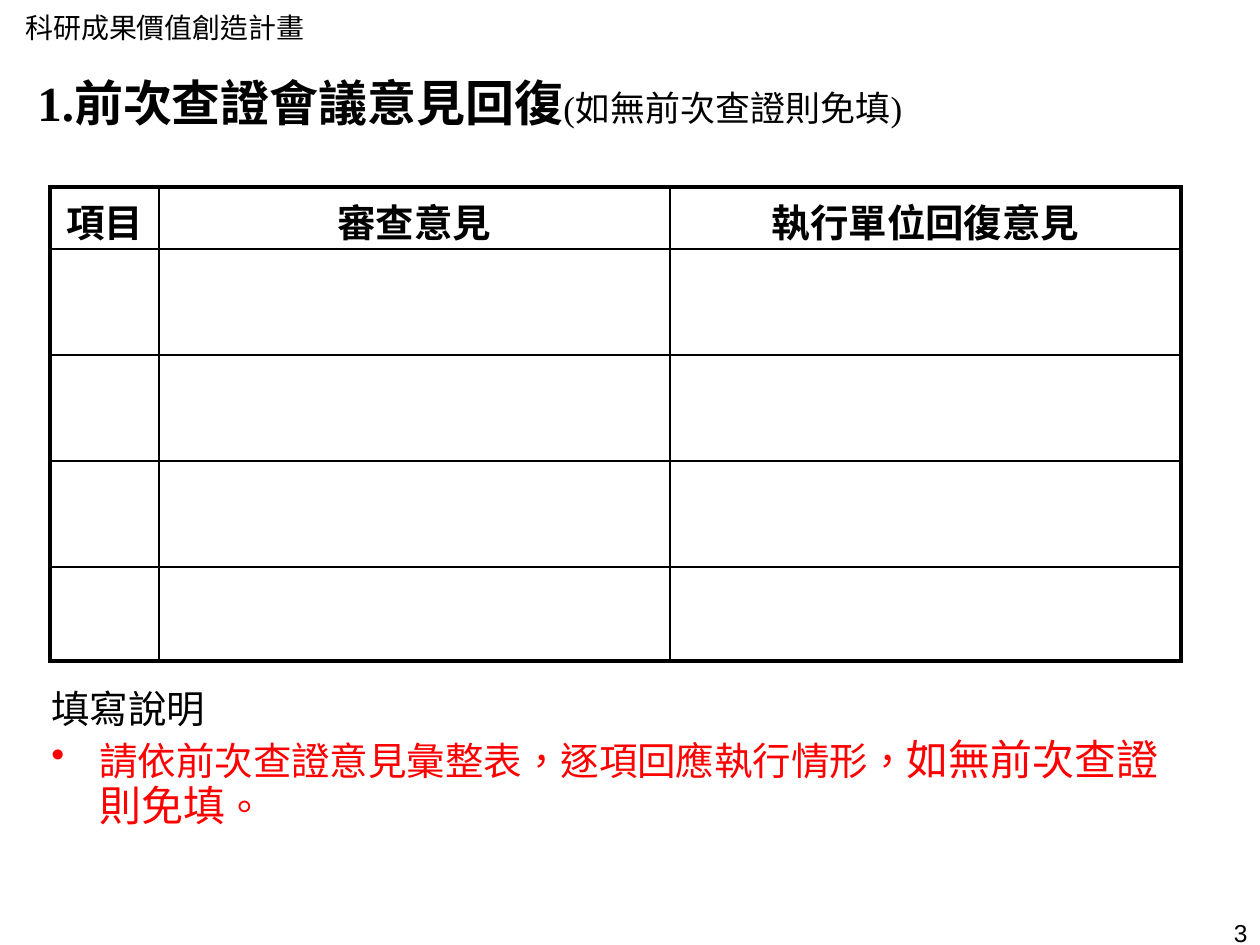
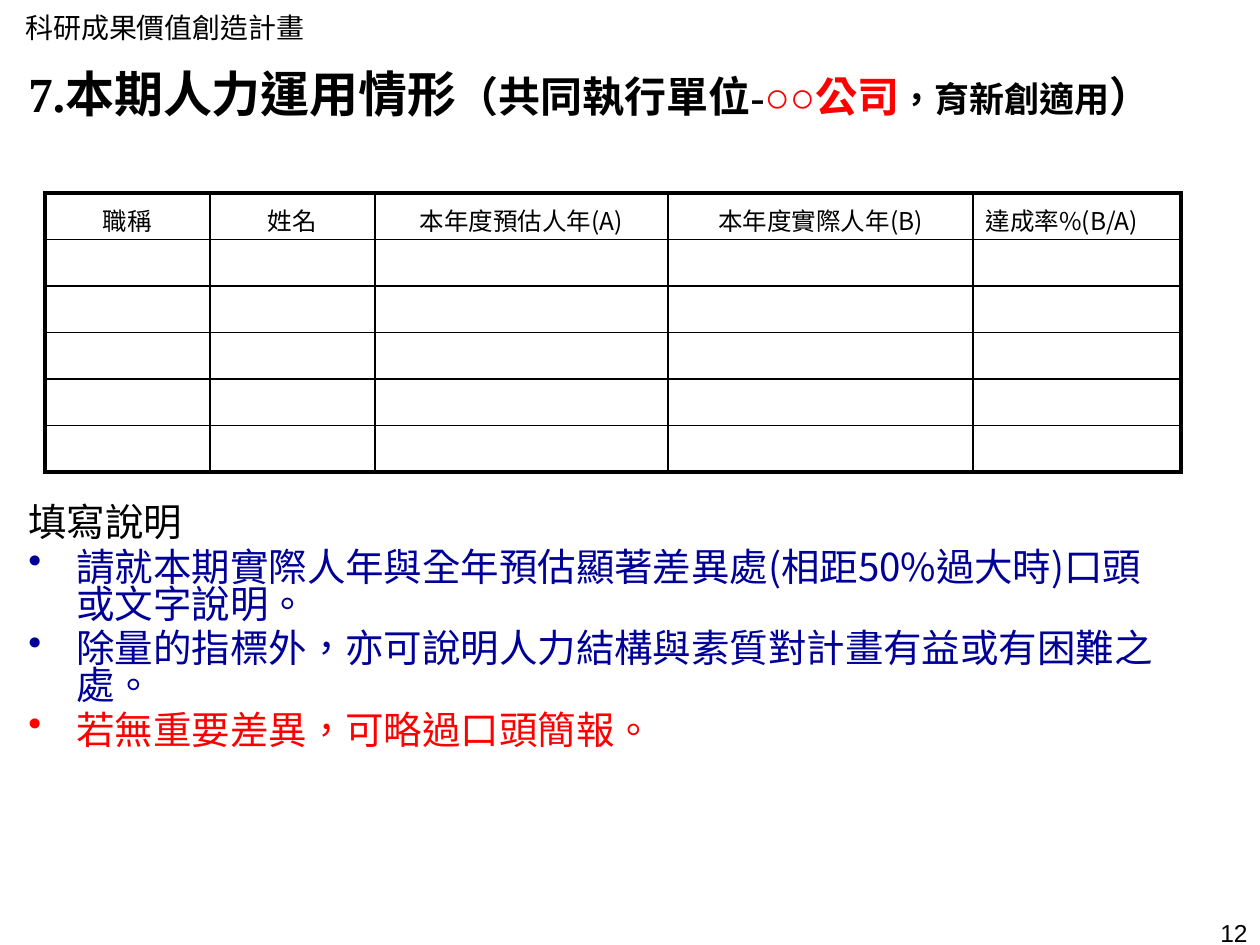
from lxml import etree
from pptx import Presentation, util as u
from pptx.dml.color import RGBColor
from pptx.enum import text
from pptx.oxml import ns

BLACK = RGBColor(0, 0, 0)
RED = RGBColor(0xFF, 0, 0)
NAVY = RGBColor(0, 0, 0x99)
SANS, SANS_TC = "Noto Sans CJK SC", "Noto Sans CJK TC"
SERIF, ARIAL = "Times New Roman", "Arial"
WIDTH, HEIGHT = 1260, 945
THIN, THICK = 1, 2.25
INDENT = 48
CENTER, RIGHT = text.PP_ALIGN.CENTER, text.PP_ALIGN.RIGHT


def px(n):
    return u.Emu(round(n * 914400 / 126))


def add_xml(parent, tag, **attrs):
    return etree.SubElement(parent, ns.qn(tag), attrs)


class Report:
    def __init__(self):
        self.prs = Presentation()
        self.prs.slide_width, self.prs.slide_height = px(WIDTH), px(HEIGHT)
        self.s = None

    def new_slide(self, number):
        """Start a slide with the plan name on top and the page number below."""
        self.s = self.prs.slides.add_slide(self.prs.slide_layouts[6])
        plan = self.box(13, 4, 309, 47, wrap=False).paragraphs[0]
        self.add_runs(plan, [("科研成果價值創造計畫", 16, SANS)])
        page = self.box(1182, 912, 78, 33).paragraphs[0]
        page.alignment = RIGHT
        self.add_runs(page, [(str(number), 14, ARIAL)])

    def box(self, x, y, w, h, wrap=True):
        tf = self.s.shapes.add_textbox(px(x), px(y), px(w), px(h)).text_frame
        tf.word_wrap = wrap
        return tf

    def add_runs(self, p, runs, bold=False):
        """Add runs given as (words, size, font[, colour[, bold]])."""
        for words, size, name, *rest in runs:
            r = p.add_run()
            r.text = words
            r.font.size, r.font.name = u.Pt(size), name
            r.font.color.rgb = rest[0] if rest else BLACK
            r.font.bold = rest[1] if len(rest) > 1 else bold
            rPr = r._r.get_or_add_rPr()
            rPr.set("lang", "zh-TW")
            east_asian = name if name in (SANS, SANS_TC) else SANS_TC
            add_xml(rPr, "a:ea", typeface=east_asian)

    def title(self, x, y, w, runs):
        self.add_runs(self.box(x, y, w, 72).paragraphs[0], runs, bold=True)

    def instructions(self, x, y, h, spacing, bullets):
        """Add the heading of the filling-in notes and its bullets."""
        tf = self.box(x, y, 1153, h)
        for i, runs in enumerate([[("填寫說明", 22, SANS)]] + bullets):
            p = tf.add_paragraph() if i else tf.paragraphs[0]
            pPr = p._p.get_or_add_pPr()
            pPr.set("marL", str(px(INDENT)))
            pPr.set("indent", str(-px(INDENT)))
            if i:
                add_xml(pPr, "a:buChar", char="•")
                p.space_before = u.Pt(4.4)
            p.line_spacing = spacing
            self.add_runs(p, runs)

    def form(self, x, y, widths, heights, heads, size, font,
             bold=False, anchor=text.MSO_ANCHOR.TOP, aligns=None):
        """Draw an empty form: a row of headings, thick frame, thin grid."""
        n_rows, n_cols = len(heights), len(widths)
        table = self.s.shapes.add_table(
            n_rows, n_cols, px(x), px(y), px(sum(widths)), px(sum(heights))).table
        table.first_row = table.horz_banding = False
        for column, w in zip(table.columns, widths):
            column.width = px(w)
        for i, (row, h) in enumerate(zip(table.rows, heights)):
            row.height = px(h)
            for j, cell in enumerate(row.cells):
                self.borders(cell, L=j == 0, R=j == n_cols - 1,
                             T=i == 0, B=i == n_rows - 1)
                cell.fill.background()
                cell.margin_bottom = 0
                cell.vertical_anchor = anchor
                p = cell.text_frame.paragraphs[0]
                if i == 0:
                    p.alignment = aligns[j] if aligns else CENTER
                    self.add_runs(p, [(heads[j], size, font)], bold)
                else:
                    p._p.get_or_add_endParaRPr().set("sz", str(size * 100))

    def borders(self, cell, **outer):
        tcPr = cell._tc.get_or_add_tcPr()
        for side, on_frame in outer.items():
            width = u.Pt(THICK if on_frame else THIN)
            ln = add_xml(tcPr, f"a:ln{side}", w=str(width))
            add_xml(add_xml(ln, "a:solidFill"), "a:srgbClr", val=str(BLACK))


def review_reply(report):
    report.new_slide(3)
    report.instructions(39, 684, 170, 0.9, [[
        ("請依前次查證意見彙整表，逐項回應執行情形，", 22, SANS, RED),
        ("如無前次查證則免填", 24, SERIF, RED),
        ("。", 22, SANS, RED)]])
    report.title(25, 66, 898, [
        ("1.前次查證會議意見回復", 28, SERIF),
        ("(如無前次查證則免填)", 20, SERIF, BLACK, False)])
    report.form(50, 187, [109, 511, 511], [62, 106, 106, 106, 94],
                ["項目", "審查意見", "執行單位回復意見"], 22, SANS_TC, bold=True)


def staffing(report):
    report.new_slide(12)
    report.instructions(16, 501, 266, 0.8, [
        [("請就本期實際人年與全年預估顯著差異處(相距50%過大時)口頭或文字說明。",
          22, SANS, NAVY)],
        [("除量的指標外，亦可說明人力結構與素質對計畫有益或有困難之處。",
          22, SANS, NAVY)],
        [("若無重要差異，可略過口頭簡報。", 22, SANS, RED)]])
    report.title(16, 57, 1193, [
        ("7.", 28, SERIF), ("本期", 28, ARIAL), ("人力運用情形", 28, SERIF),
        ("（共同執行單位-", 24, SERIF), ("○○公司", 24, SERIF, RED),
        ("，育新創適用", 20, SERIF), ("）", 24, SERIF)])
    report.form(45, 193, [165, 165, 293, 305, 208], [279 / 6] * 6,
                ["職稱", "姓名", "本年度預估人年(A)", "本年度實際人年(B)",
                 "達成率%(B/A)"], 14, SANS, anchor=text.MSO_ANCHOR.MIDDLE,
                aligns=[CENTER] * 4 + [text.PP_ALIGN.LEFT])


def main():
    report = Report()
    review_reply(report)
    staffing(report)
    report.prs.save("out.pptx")


if __name__ == "__main__":
    main()
